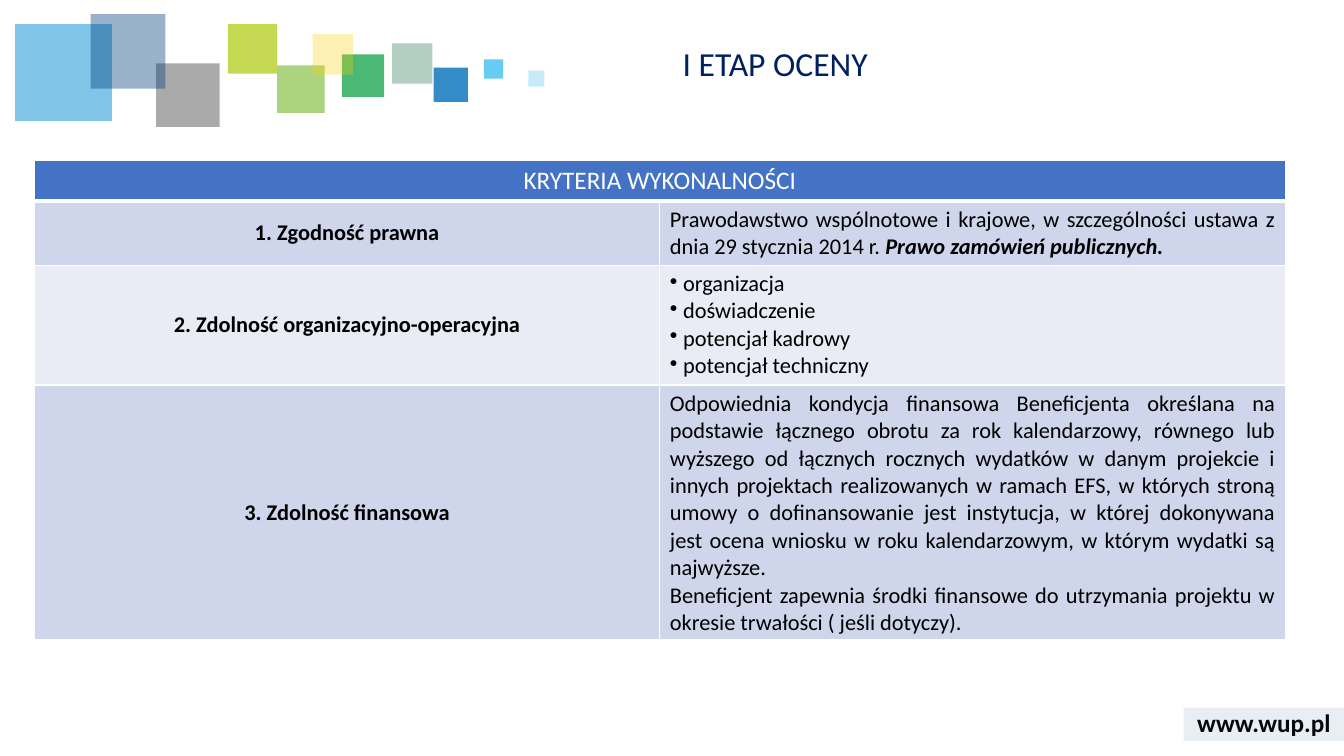
from dataclasses import dataclass
from typing import Any

from lxml.etree import SubElement as Sub
from pptx import Presentation
from pptx.dml.color import RGBColor as RGB
from pptx.enum.shapes import MSO_SHAPE as Form
from pptx.enum.text import MSO_ANCHOR as Anchor, MSO_AUTO_SIZE as Fit, PP_ALIGN as Align
from pptx.oxml.ns import qn
from pptx.util import Inches, Pt

WHITE = RGB(0xFF, 0xFF, 0xFF)
BLACK = RGB(0x00, 0x00, 0x00)
NAVY = RGB(0x00, 0x20, 0x60)
BLUE = RGB(0x44, 0x72, 0xC4)
DARK = RGB(0xCF, 0xD5, 0xEA)
LIGHT = RGB(0xE9, 0xEB, 0xF5)
SLATE = RGB(0x2F, 0x55, 0x97)
SKY = RGB(0x40, 0xC0, 0xF1)

UNIT = Inches(0.1)  # side of one grid cell
TAG = (117.4, 70.2, 15.9, 3.3)
HEAD = {"name": "Calibri", "size": Pt(18), "bold": False}
BODY = {"name": "Calibri", "size": Pt(16), "bold": False}
BOLD = BODY | {"bold": True}


@dataclass
class Tile:
    col: float
    row: float
    side: float
    color: RGB
    alpha: int  # percent


@dataclass
class Part:
    text: str
    font: dict[str, Any]


@dataclass
class Row:
    name: str
    paras: list[list[Part]]
    high: float
    fill: RGB
    dots: bool = False


TILES = [
    Tile(38.9, 4.3, 4, RGB(0x00, 0x61, 0x38), 30),
    Tile(43, 6.7, 3.4, RGB(0x00, 0x6E, 0xB9), 80),
    Tile(33.9, 5.4, 4.2, RGB(0x00, 0x9A, 0x3C), 70),
    Tile(1.5, 2.4, 9.6, RGB(0x02, 0x8B, 0xD3), 50),
    Tile(27.5, 6.5, 4.7, RGB(0x75, 0xB8, 0x2A), 60),
    Tile(15.5, 6.3, 6.3, RGB(0x57, 0x57, 0x57), 50),
    Tile(9, 1.4, 7.4, RGB(0x00, 0x3D, 0x7C), 40),
    Tile(48, 5.9, 1.9, SKY, 80),
    Tile(22.6, 2.4, 4.9, RGB(0xAF, 0xCA, 0x0B), 70),
    Tile(31, 3.4, 4, RGB(0xFE, 0xD0, 0x00), 30),
    Tile(52.4, 7, 1.6, SKY, 30),
]

ROWS = [
    Row("1. Zgodność prawna", [[
        Part("Prawodawstwo wspólnotowe i krajowe, w szczególności ustawa "
             "z dnia 29 stycznia 2014 r. ", BODY),
        Part("Prawo zamówień publicznych.", BOLD | {"italic": True}),
    ]], 6.4, DARK),
    Row("2. Zdolność organizacyjno-operacyjna", [
        [Part(word, BODY)] for word in
        ("organizacja", "doświadczenie", "potencjał kadrowy", "potencjał techniczny")
    ], 11.9, LIGHT, dots=True),
    Row("3. Zdolność finansowa", [
        [Part("Odpowiednia kondycja finansowa Beneficjenta określana "
              "na podstawie łącznego obrotu za rok kalendarzowy, równego lub "
              "wyższego od łącznych rocznych wydatków w danym projekcie "
              "i innych projektach realizowanych w ramach EFS, w których stroną "
              "umowy o dofinansowanie jest instytucja, w której dokonywana "
              "jest ocena wniosku w roku kalendarzowym, w którym wydatki są "
              "najwyższe.", BODY)],
        [Part("Beneficjent zapewnia środki finansowe do utrzymania projektu "
              "w okresie trwałości ( jeśli dotyczy).", BODY)],
    ], 25.3, DARK),
]


def grid(*cells: float) -> list[int]:
    return [round(cell * UNIT) for cell in cells]


def style(item: Any, form: dict[str, Any]) -> None:
    for key, value in form.items():
        setattr(item, key, value)


def write(para: Any, parts: list[Part], color: RGB, align: Any) -> None:
    para.alignment = align
    for part in parts:
        run = para.add_run()
        run.text = part.text
        style(run.font, part.font)
        run.font.color.rgb = color


def block(shapes: Any, box: list[int], color: RGB, alpha: int) -> None:
    shape = shapes.add_shape(Form.RECTANGLE, *box)
    shape.shadow.inherit = False
    shape.line.fill.background()
    shape.fill.solid()
    shape.fill.fore_color.rgb = color
    tint = next(shape.element.spPr.iter(qn("a:srgbClr")))
    Sub(tint, qn("a:alpha"), val=str(alpha * 1000))


def dot(para: Any) -> None:
    props = para._p.get_or_add_pPr()
    gap = Inches(0.13)
    props.set("marL", str(gap))
    props.set("indent", str(-gap))
    Sub(props, qn("a:buChar"), char="•")


def paint(cell: Any, color: RGB, base: int = 1) -> None:
    props = cell._tc.get_or_add_tcPr()
    for side, width in (("L", 1), ("R", 1), ("T", 1), ("B", base)):
        line = Sub(props, qn(f"a:ln{side}"), w=str(Pt(width)))
        Sub(Sub(line, qn("a:solidFill")), qn("a:srgbClr"), val=str(WHITE))
    cell.fill.solid()
    cell.fill.fore_color.rgb = color


def table(shapes: Any) -> None:
    highs = [4, *(row.high for row in ROWS)]
    grid_box = grid(3.4, 15.9, 124.1, sum(highs))
    tab = shapes.add_table(len(highs), 2, *grid_box).table
    for line, high in zip(tab.rows, grid(*highs)):
        line.height = high

    # Header across both columns
    head = tab.cell(0, 0)
    head.merge(tab.cell(0, 1))
    for col in range(2):
        paint(tab.cell(0, col), BLUE, 3)
    write(head.text_frame.paragraphs[0], [Part("KRYTERIA WYKONALNOŚCI", HEAD)],
          WHITE, Align.CENTER)

    # One row for each criterion
    for num, row in enumerate(ROWS, 1):
        left, right = tab.cell(num, 0), tab.cell(num, 1)
        for cell in (left, right):
            paint(cell, row.fill)
        left.vertical_anchor = Anchor.MIDDLE
        write(left.text_frame.paragraphs[0], [Part(row.name, BOLD)], BLACK, Align.CENTER)
        frame = right.text_frame
        for pos, parts in enumerate(row.paras):
            para = frame.add_paragraph() if pos else frame.paragraphs[0]
            if row.dots:
                dot(para)
            write(para, parts, BLACK, Align.JUSTIFY)


def main() -> None:
    deck = Presentation()
    style(deck, {"slide_width": Inches(13.33), "slide_height": Inches(7.5)})
    slide = deck.slides.add_slide(deck.slide_layouts[5])
    shapes = slide.shapes

    # Title
    title = shapes.title
    left, top, width, height = grid(66.7, 4.2, 63.6, 5.5)
    style(title, {"left": left, "top": top, "width": width, "height": height})
    style(title.text_frame, {"vertical_anchor": Anchor.TOP, "word_wrap": True,
                             "auto_size": Fit.NONE})
    para = title.text_frame.paragraphs[0]
    write(para, [Part("I ETAP OCENY", HEAD | {"size": Pt(24)})], NAVY, Align.LEFT)
    para.line_spacing = 0.9

    # Web address with its tinted band
    foot = shapes.add_textbox(*grid(117.4, 69.7, 15.9, 4)).text_frame
    style(foot, {"vertical_anchor": Anchor.MIDDLE, "word_wrap": True})
    write(foot.paragraphs[0], [Part("www.wup.pl", HEAD | {"bold": True})],
          BLACK, Align.CENTER)
    block(shapes, grid(*TAG), SLATE, 10)

    # Coloured squares
    for tile in TILES:
        block(shapes, grid(tile.col, tile.row, tile.side, tile.side), tile.color, tile.alpha)

    table(shapes)
    deck.save("out.pptx")


if __name__ == "__main__":
    main()
